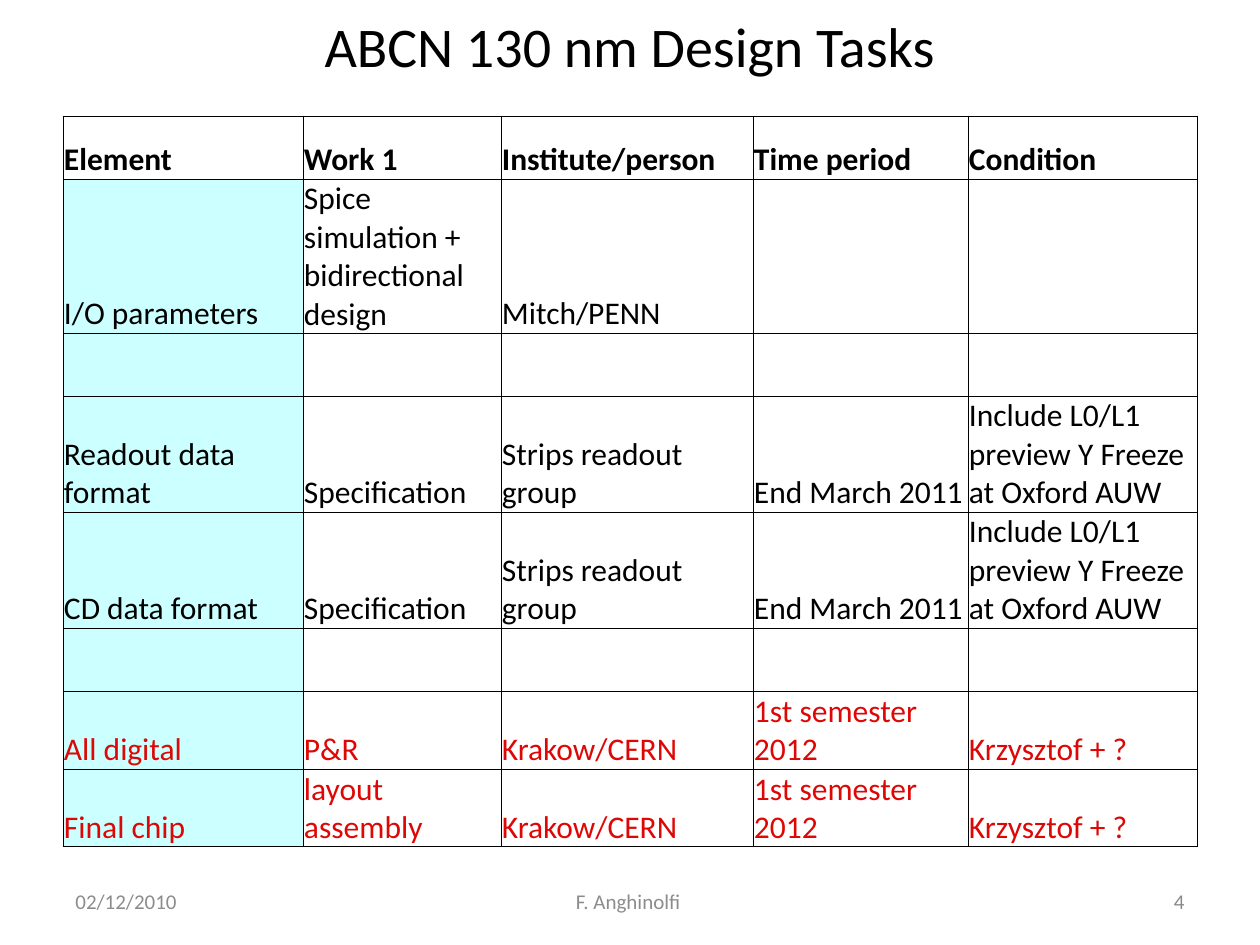
import pptx
import pptx.dml.color
import pptx.enum.text
import pptx.oxml
import pptx.oxml.ns
import pptx.util

SCALE = 914400 / 126
ALIGN = pptx.enum.text.PP_ALIGN
ANCHOR = pptx.enum.text.MSO_ANCHOR
THEME = {
    "font": "Calibri",
    "black": "000000", "red": "DD0806", "aqua": "CCFFFF",
    "grey": "8C8C8C", "number_grey": "898989",
    "title": 32, "body": 18, "footer": 12,
    "border": 0.5,
}


def px(length):
    return pptx.util.Emu(round(length * SCALE))


def write(frame, text, size="body", color="black", bold=False, align=ALIGN.LEFT):
    frame.word_wrap = True
    paragraph = frame.paragraphs[0]
    paragraph.alignment = align
    run = paragraph.add_run()
    run.text = text
    run.font.name = THEME["font"]
    run.font.size = pptx.util.Pt(THEME[size])
    run.font.bold = bold
    run.font.color.rgb = pptx.dml.color.RGBColor.from_string(THEME[color])


deck = pptx.Presentation()
deck.slide_width, deck.slide_height = px(1260), px(945)
slide = deck.slides.add_slide(deck.slide_layouts[6])

footers = [
    (63, 294, "02/12/2010", "grey", ALIGN.LEFT),
    (903, 294, "4", "number_grey", ALIGN.RIGHT),
    (431, 399, "F. Anghinolfi ", "grey", ALIGN.CENTER),
]
for left, width, text, color, align in footers:
    footer = slide.shapes.add_textbox(px(left), px(876), px(width), px(50)).text_frame
    footer.vertical_anchor = ANCHOR.MIDDLE
    write(footer, text, size="footer", color=color, align=align)

title = slide.shapes.add_textbox(px(63), px(0), px(1134), px(157)).text_frame
title.vertical_anchor = ANCHOR.TOP
title.margin_top = px(11)
write(title, "ABCN 130 nm Design Tasks", size="title", align=ALIGN.CENTER)

readout = ["Specification", "Strips readout group", "End March 2011",
           "Include L0/L1 preview Y Freeze at Oxford AUW"]
blank = [""] * 5
task_rows = [
    (63, "black", ["Element", "Work 1", "Institute/person", "Time period", "Condition"]),
    (154, "black", ["I/O parameters", "Spice simulation + bidirectional design",
                    "Mitch/PENN", "", ""]),
    (63, "black", blank),
    (116, "black", ["Readout data format", *readout]),
    (116, "black", ["CD data format", *readout]),
    (63, "black", blank),
    (78, "red", ["All digital", "P&R", "Krakow/CERN", "1st semester 2012", "Krzysztof + ?"]),
    (78, "red", ["Final chip", "layout assembly", "Krakow/CERN", "1st semester 2012",
                 "Krzysztof + ?"]),
]
column_widths = [240, 198, 252, 215, 229]

tasks = slide.shapes.add_table(
    len(task_rows), len(column_widths), px(63), px(116),
    px(sum(column_widths)), px(sum(row[0] for row in task_rows))).table
tasks.first_row = False
tasks.horz_banding = False
for column, width in zip(tasks.columns, column_widths):
    column.width = px(width)

for row_index, (height, color, entries) in enumerate(task_rows):
    tasks.rows[row_index].height = px(height)
    for column_index, entry in enumerate(entries):
        cell = tasks.cell(row_index, column_index)
        cell.vertical_anchor = ANCHOR.BOTTOM
        cell.margin_left = cell.margin_right = cell.margin_top = px(1)
        cell.margin_bottom = 0
        properties = cell._tc.get_or_add_tcPr()
        for side in ("lnL", "lnR", "lnT", "lnB"):
            properties.append(pptx.oxml.parse_xml(
                f'<a:{side} {pptx.oxml.ns.nsdecls("a")} w="{pptx.util.Pt(THEME["border"])}">'
                f'<a:solidFill><a:srgbClr val="{THEME["black"]}"/></a:solidFill></a:{side}>'))
        if column_index == 0 and row_index > 0:
            cell.fill.solid()
            cell.fill.fore_color.rgb = pptx.dml.color.RGBColor.from_string(THEME["aqua"])
        else:
            cell.fill.background()
        if entry:
            write(cell.text_frame, entry, color=color, bold=row_index == 0)

deck.save("out.pptx")
